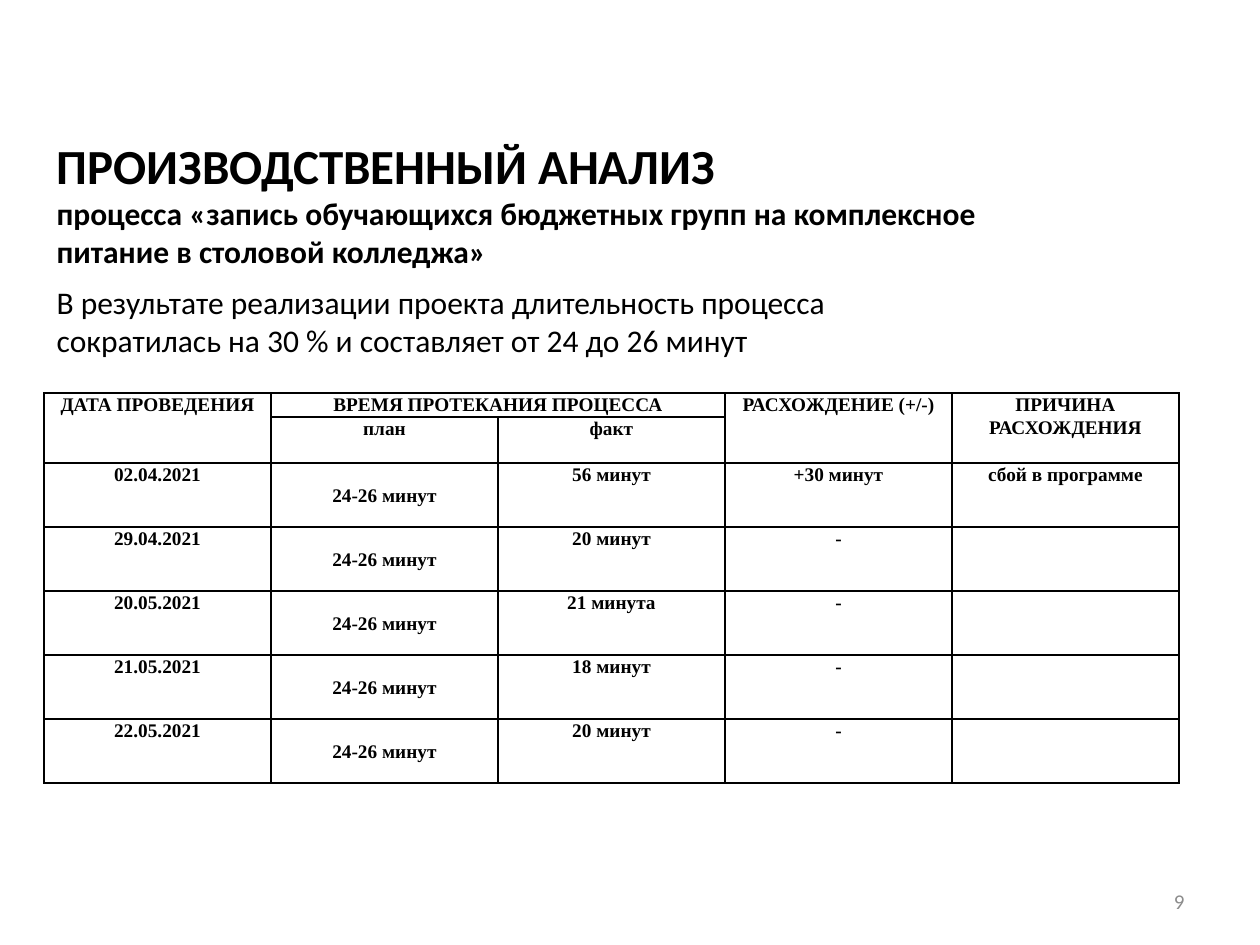
from typing import NamedTuple

from lxml.etree import SubElement
from pptx import Presentation
from pptx.dml.color import RGBColor
from pptx.enum.text import MSO_ANCHOR, MSO_AUTO_SIZE, PP_ALIGN
from pptx.oxml import parse_xml
from pptx.oxml.ns import nsdecls, qn
from pptx.util import Emu, Pt

BLACK = RGBColor(0x00, 0x00, 0x00)
GRAY = RGBColor(0x8C, 0x8C, 0x8C)
COLUMN_WIDTH = 227
HEADER_HEIGHTS = [24, 46]
RECORD_HEIGHT = 64
PLAN = "24-26 минут"


class Box(NamedTuple):
    left: int
    top: int
    width: int
    height: int


class Line(NamedTuple):
    text: str
    size: int
    bold: bool = False
    color: RGBColor = BLACK
    align: PP_ALIGN = PP_ALIGN.LEFT


class Header(NamedTuple):
    row: int
    column: int
    text: str
    rows: int = 1
    columns: int = 1


class Record(NamedTuple):
    date: str
    fact: str
    difference: str = "-"
    reason: str = ""


HEADERS = [
    Header(0, 0, "ДАТА ПРОВЕДЕНИЯ", rows=2),
    Header(0, 1, "ВРЕМЯ ПРОТЕКАНИЯ ПРОЦЕССА", columns=2),
    Header(0, 3, "РАСХОЖДЕНИЕ (+/-)", rows=2),
    Header(0, 4, "ПРИЧИНА РАСХОЖДЕНИЯ", rows=2),
    Header(1, 1, "план"),
    Header(1, 2, "факт"),
]
RECORDS = [
    Record("02.04.2021", "56 минут", "+30 минут", "сбой в программе"),
    Record("29.04.2021", "20 минут"),
    Record("20.05.2021", "21 минута"),
    Record("21.05.2021", "18 минут"),
    Record("22.05.2021", "20 минут"),
]


def px(count: int) -> Emu:
    """Turn pixels into EMU at 126 pixels to the inch."""
    return Emu(round(count * 914400 / 126))


def write_lines(shape, box: Box, lines: list[Line], anchor: MSO_ANCHOR, inset: int = 6) -> None:
    """Place a text shape and fill it with formatted paragraphs."""
    shape.left, shape.top, shape.width, shape.height = map(px, box)
    frame = shape.text_frame
    frame.word_wrap = True
    frame.auto_size = MSO_AUTO_SIZE.NONE
    frame.vertical_anchor = anchor
    frame.margin_top = px(inset)
    frame.text = "\n".join(line.text for line in lines)
    for paragraph, line in zip(frame.paragraphs, lines):
        properties = paragraph._p.get_or_add_pPr()
        properties.set("marL", "0")
        properties.set("indent", "0")
        SubElement(properties, qn("a:buNone"))
        paragraph.alignment = line.align
        paragraph.space_before = Pt(0)
        paragraph.font.name = "Calibri"
        paragraph.font.size = Pt(line.size)
        paragraph.font.bold = line.bold
        paragraph.font.color.rgb = line.color


def frame_cell(cell) -> None:
    """Clear the fill of a cell and draw its four borders."""
    cell.fill.background()
    properties = cell._tc.get_or_add_tcPr()
    for index, side in enumerate("LRTB"):
        properties.insert(index, parse_xml(
            f'<a:ln{side} {nsdecls("a")} w="{Pt(1)}"><a:solidFill>'
            f'<a:srgbClr val="{BLACK}"/></a:solidFill></a:ln{side}>'))


def write_cell(cell, text: str, anchor: MSO_ANCHOR = MSO_ANCHOR.TOP) -> None:
    """Write one centred bold text into a table cell."""
    cell.margin_left = cell.margin_right = px(9)
    cell.margin_top = cell.margin_bottom = 0
    cell.vertical_anchor = anchor
    cell.text = text
    paragraph = cell.text_frame.paragraphs[0]
    paragraph.alignment = PP_ALIGN.CENTER
    paragraph.line_spacing = 1.07
    paragraph.font.name = "Times New Roman"
    paragraph.font.size = Pt(11)
    paragraph.font.bold = True
    paragraph.font.color.rgb = BLACK


def add_measurements(page) -> None:
    """Add the table of planned and actual process times."""
    heights = HEADER_HEIGHTS + [RECORD_HEIGHT] * len(RECORDS)
    box = Box(44, 393, 5 * COLUMN_WIDTH, sum(heights))
    table = page.shapes.add_table(len(heights), 5, *map(px, box)).table
    table.first_row = table.horz_banding = False
    for column in table.columns:
        column.width = px(COLUMN_WIDTH)
    for row, height in zip(table.rows, heights):
        row.height = px(height)
    for cell in table.iter_cells():
        frame_cell(cell)
    for header in HEADERS:
        cell = table.cell(header.row, header.column)
        if header.rows * header.columns > 1:
            cell.merge(table.cell(header.row + header.rows - 1,
                                  header.column + header.columns - 1))
        write_cell(cell, header.text)
    for row, record in enumerate(RECORDS, len(HEADER_HEIGHTS)):
        write_cell(table.cell(row, 0), record.date)
        write_cell(table.cell(row, 1), PLAN, MSO_ANCHOR.MIDDLE)
        for column, text in enumerate(record[1:], 2):
            write_cell(table.cell(row, column), text)


def main() -> None:
    """Build the slide and save the deck."""
    deck = Presentation()
    deck.slide_width, deck.slide_height = px(1260), px(945)
    page = deck.slides.add_slide(deck.slide_layouts[1])
    write_lines(page.shapes.title, Box(44, 125, 983, 186), [
        Line("ПРОИЗВОДСТВЕННЫЙ АНАЛИЗ", 28, bold=True),
        Line("процесса «запись обучающихся бюджетных групп на комплексное "
             "питание в столовой колледжа»", 18, bold=True),
    ], MSO_ANCHOR.TOP, inset=10)
    write_lines(page.placeholders[1], Box(44, 277, 1062, 89), [
        Line("В результате реализации проекта длительность процесса", 18),
        Line("сократилась на 30 % и составляет от 24 до 26 минут", 18),
    ], MSO_ANCHOR.TOP)
    add_measurements(page)
    number_box = Box(903, 876, 294, 50)
    write_lines(page.shapes.add_textbox(*map(px, number_box)), number_box, [
        Line("9", 12, color=GRAY, align=PP_ALIGN.RIGHT),
    ], MSO_ANCHOR.MIDDLE)
    deck.save("out.pptx")


if __name__ == "__main__":
    main()
